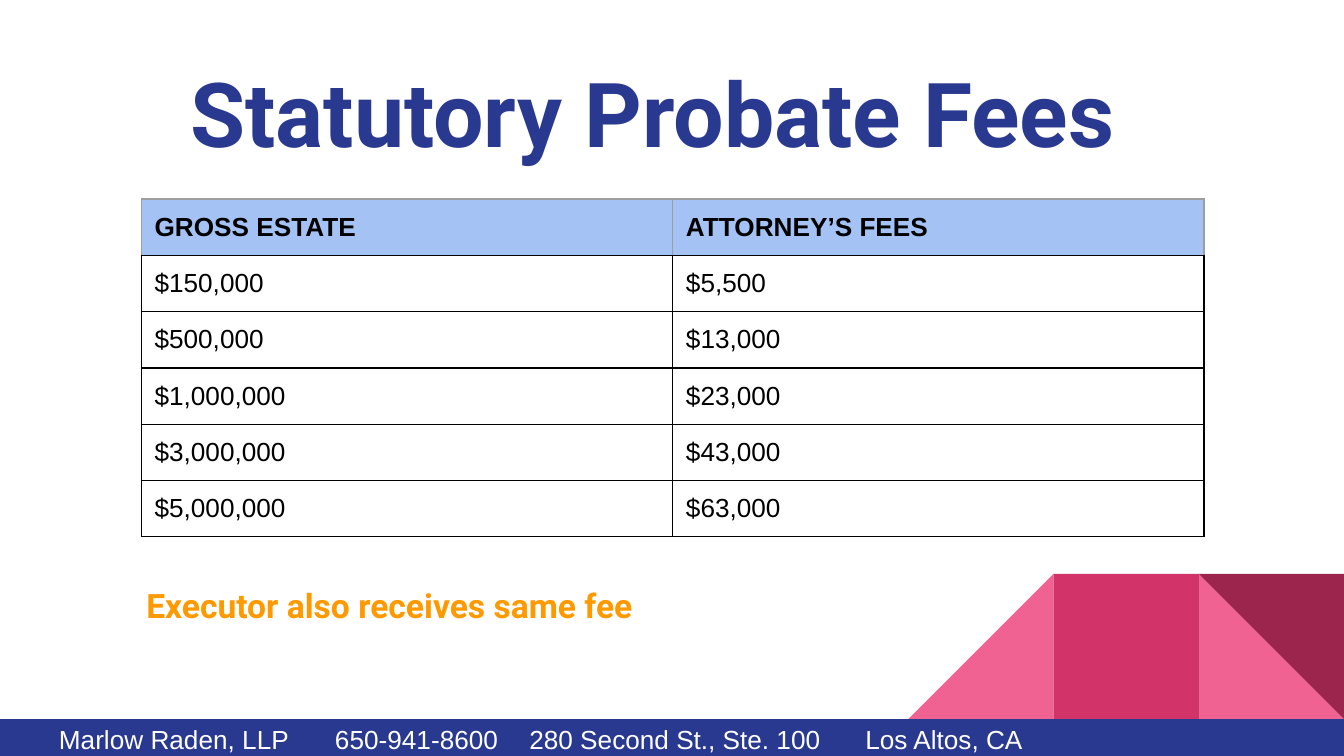
from lxml import etree
from pptx import Presentation
from pptx.dml.color import RGBColor
from pptx.enum.shapes import MSO_SHAPE
from pptx.enum.text import MSO_ANCHOR, PP_ALIGN
from pptx.oxml.ns import qn
from pptx.util import Pt

RECT = MSO_SHAPE.RECTANGLE
TRIANGLE = MSO_SHAPE.RIGHT_TRIANGLE

COLORS = {
    "navy": "2A3990", "orange": "FF9900", "white": "FFFFFF", "black": "000000",
    "gray": "9E9E9E", "header": "A4C2F4",
    "pink": "F06292", "rose": "D23369", "wine": "9C254D",
}

TITLE = "Statutory Probate Fees"
FEES = [
    ("GROSS ESTATE", "ATTORNEY’S FEES"),
    ("$150,000", "$5,500"),
    ("$500,000", "$13,000"),
    ("$1,000,000", "$23,000"),
    ("$3,000,000", "$43,000"),
    ("$5,000,000", "$63,000"),
]
NOTE = "Executor also receives same fee"
CONTACT = ["Marlow Raden, LLP", " 650-941-8600", "280 Second St., Ste. 100", "Los Altos, CA"]

# Tiles of the corner motif: shape, column from the left, rotation, color
TILES = [
    (TRIANGLE, 2, 0, "pink"),
    (TRIANGLE, 0, 270, "pink"),
    (RECT, 1, 0, "rose"),
    (TRIANGLE, 2, 180, "wine"),
]

SLIDE_W, SLIDE_H = 720, 405
BAR_TOP = 385.2
TILE = 77.8
INSET = 7.2
TABLE_LEFT, TABLE_TOP = 75.6, 106.6
COL_W, ROW_H = 284.7, 30.1


def rgb(name):
    return RGBColor.from_string(COLORS[name])


def add_block(slide, kind, left, top, width, height, color):
    block = slide.shapes.add_shape(kind, Pt(left), Pt(top), Pt(width), Pt(height))
    block.shadow.inherit = False
    block.fill.solid()
    block.fill.fore_color.rgb = rgb(color)
    block.line.fill.background()
    return block


def write(frame, text, font, size, color, bold=False):
    paragraph = frame.paragraphs[0]
    paragraph.alignment = PP_ALIGN.LEFT
    run = paragraph.add_run()
    run.text = text
    run.font.name = font
    run.font.size = Pt(size)
    run.font.bold = bold
    run.font.color.rgb = rgb(color)


def set_insets(frame):
    """Give a text frame or a table cell the same margin on all sides."""
    frame.margin_left = frame.margin_right = Pt(INSET)
    frame.margin_top = frame.margin_bottom = Pt(INSET)


def fill_text_shape(shape, box, text, *style):
    shape.left, shape.top, shape.width, shape.height = map(Pt, box)
    frame = shape.text_frame
    frame.word_wrap = True
    frame.vertical_anchor = MSO_ANCHOR.TOP
    set_insets(frame)
    write(frame, text, *style)


def add_text(slide, box, text, *style):
    fill_text_shape(slide.shapes.add_textbox(*map(Pt, box)), box, text, *style)


def set_borders(cell, edges):
    properties = cell._tc.get_or_add_tcPr()
    for side in "LRTB":
        line = etree.SubElement(properties, qn(f"a:ln{side}"), w=str(Pt(0.75)))
        fill = etree.SubElement(line, qn("a:solidFill"))
        etree.SubElement(fill, qn("a:srgbClr"), val=COLORS[edges[side]])


def add_fee_table(slide):
    rows, cols = len(FEES), len(FEES[0])
    table = slide.shapes.add_table(
        rows, cols, Pt(TABLE_LEFT), Pt(TABLE_TOP), Pt(COL_W * cols), Pt(ROW_H * rows)
    ).table
    table.horz_banding = False
    table.first_row = False
    for column in table.columns:
        column.width = Pt(COL_W)
    for r, fees in enumerate(FEES):
        table.rows[r].height = Pt(ROW_H)
        is_header = r == 0
        edges = dict.fromkeys("LRTB", "black")
        if is_header:
            edges.update(dict.fromkeys("LRT", "gray"))
        for c, text in enumerate(fees):
            cell = table.cell(r, c)
            set_insets(cell)
            set_borders(cell, edges)
            if is_header:
                cell.fill.solid()
                cell.fill.fore_color.rgb = rgb("header")
            else:
                cell.fill.background()
            write(cell.text_frame, text, "Arial", 14, "black", is_header)


def main():
    deck = Presentation()
    deck.slide_width, deck.slide_height = Pt(SLIDE_W), Pt(SLIDE_H)
    slide = deck.slides.add_slide(deck.slide_layouts[5])

    motif_left = SLIDE_W - 3 * TILE
    for kind, column, rotation, color in TILES:
        tile = add_block(slide, kind, motif_left + column * TILE, BAR_TOP - TILE, TILE, TILE, color)
        tile.rotation = rotation
    add_block(slide, RECT, 0, BAR_TOP, SLIDE_W, SLIDE_H - BAR_TOP, "navy")

    fill_text_shape(slide.shapes.title, (95, 23.8, 530, 110.9), TITLE, "Roboto", 48, "navy", True)
    add_fee_table(slide)
    add_text(slide, (24.5, 380.2, 634.3, 53.3), "\t".join(CONTACT), "Arial", 14, "white")
    add_text(slide, (71.3, 306, 578.2, 67.7), NOTE, "Roboto", 18, "orange", True)
    deck.save("out.pptx")


if __name__ == "__main__":
    main()
